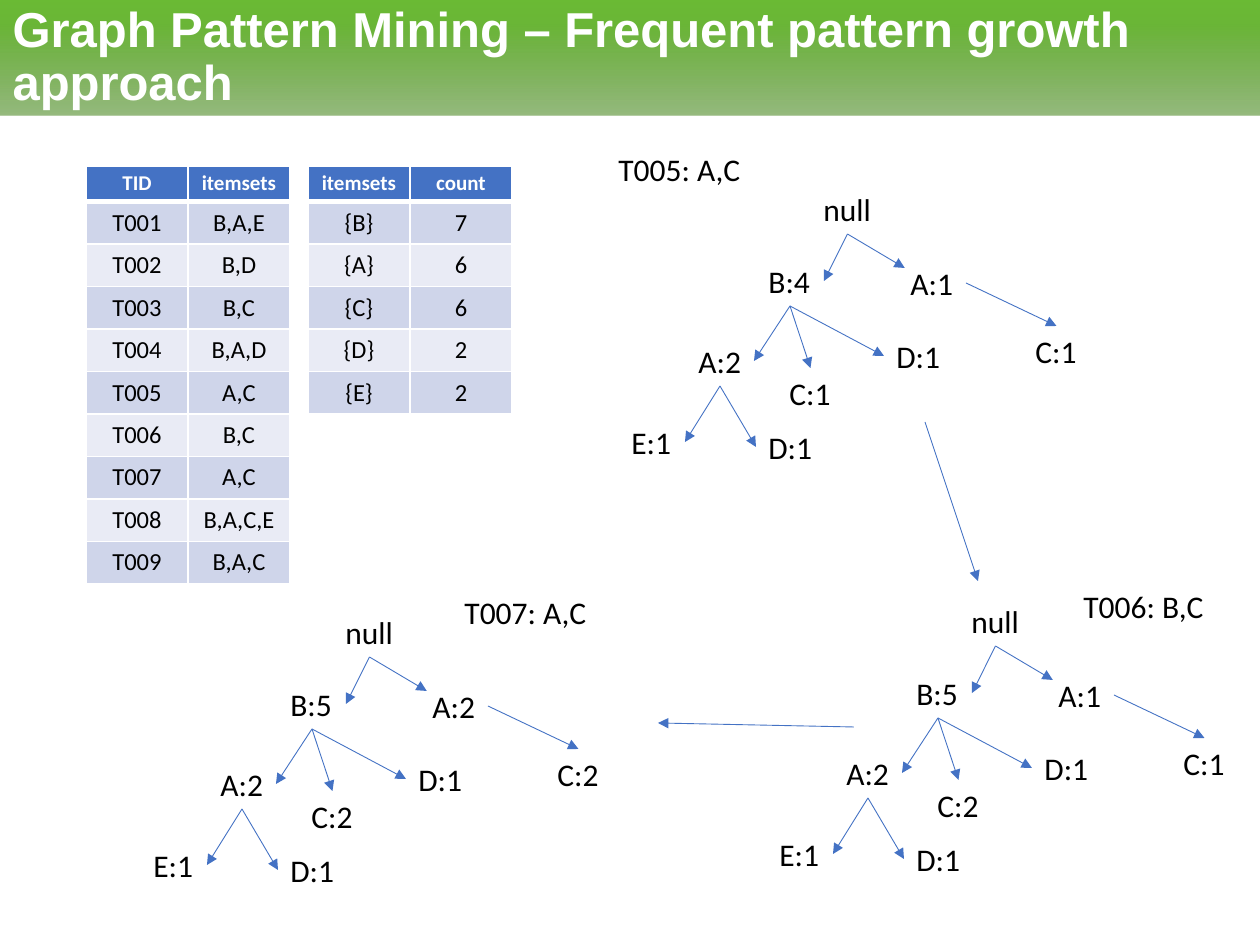
from dataclasses import dataclass

from pptx import Presentation
from pptx import oxml
from pptx import util as u
from pptx.dml.color import RGBColor
from pptx.enum import shapes, text
from pptx.oxml import ns

EMU_PER_PX = 914400 / 126


def px(length):
    """Turn px into EMU."""
    return u.Emu(round(length * EMU_PER_PX))


@dataclass(frozen=True)
class Theme:
    """Colours, fonts and type sizes of the slide."""
    ink: str = "000000"
    paper: str = "FFFFFF"
    accent: str = "4472C4"
    bands: tuple = ("CFD5EA", "E9EBF5")
    banner: tuple = ((0, "518D2A", 60), (80, "6AB636", 100), (100, "6ABA34", 100))
    title_font: str = "Arial"
    body_font: str = "Calibri"
    title_size: int = 28
    label_size: int = 18
    cell_size: int = 14
    header_size: int = 12
    line_width: float = 0.5


@dataclass(frozen=True)
class Branch:
    """A tree node: offset from the root, width, parent and the sides its arrow joins."""
    left: int
    top: int
    width: int
    parent: str = ""
    leaves: str = "bottom"
    enters: str = "left"


SIDES = {"top": (0.5, 0), "bottom": (0.5, 1), "left": (0, 0.5), "right": (1, 0.5), "corner": (0.1, 0.2)}
LABEL_HEIGHT = 50
TREE = {
    "root": Branch(0, 0, 73),
    "B": Branch(-55, 72, 68, "root", enters="right"),
    "BA": Branch(-125, 152, 68, "B", enters="right"),
    "BAE": Branch(-192, 233, 66, "BA", enters="right"),
    "BD": Branch(73, 147, 69, "B"),
    "BC": Branch(-34, 184, 67, "B", enters="top"),
    "BAD": Branch(-55, 238, 69, "BA"),
    "A": Branch(87, 74, 68, "root", enters="corner"),
    "AC": Branch(212, 142, 67, "A", leaves="right", enters="top"),
}


class Deck:
    """Draws the elements of the current slide in one theme."""

    def __init__(self, width, height, theme):
        self.theme = theme
        self.file = Presentation()
        self.file.slide_width, self.file.slide_height = px(width), px(height)
        self.slide = self.file.slides.add_slide(self.file.slide_layouts[5])

    def style(self, paragraph, size, color, font=None, bold=False):
        """Set the font of a whole paragraph."""
        paragraph.font.size = u.Pt(size)
        paragraph.font.name = font or self.theme.body_font
        paragraph.font.bold = bold
        paragraph.font.color.rgb = RGBColor.from_string(color)

    def title(self, wording, left, top, width, height):
        """Fill the title placeholder on a gradient banner."""
        banner = self.slide.shapes.title
        banner.left, banner.top, banner.width, banner.height = map(px, (left, top, width, height))
        stops = "".join(
            f'<a:gs pos="{at * 1000}"><a:srgbClr val="{color}"><a:alpha val="{alpha * 1000}"/></a:srgbClr></a:gs>'
            for at, color, alpha in self.theme.banner)
        banner._element.spPr.append(oxml.parse_xml(
            f'<a:gradFill {ns.nsdecls("a")}><a:gsLst>{stops}</a:gsLst><a:lin ang="16200000" scaled="0"/></a:gradFill>'))
        frame = banner.text_frame
        frame.text = wording
        frame.auto_size = text.MSO_AUTO_SIZE.NONE
        frame.vertical_anchor = text.MSO_ANCHOR.MIDDLE
        heading = frame.paragraphs[0]
        heading.alignment = text.PP_ALIGN.LEFT
        heading.line_spacing = 0.9
        self.style(heading, self.theme.title_size, self.theme.paper, self.theme.title_font, True)

    def table(self, rows, left, top, column=102, header=35, row=42):
        """Add a banded table whose first row is the header."""
        columns = len(rows[0])
        grid = self.slide.shapes.add_table(
            len(rows), columns, px(left), px(top), px(column * columns), px(header + row * (len(rows) - 1))).table
        for y, entries in enumerate(rows):
            grid.rows[y].height = px(row if y else header)
            for x, entry in enumerate(entries):
                self.cell(grid.cell(y, x), entry, y)

    def cell(self, cell, entry, row):
        """Write one table cell with its borders and fill."""
        theme = self.theme
        for side in "LRTB":
            points = 3 if row == 0 and side == "B" else 1
            cell._tc.get_or_add_tcPr().append(oxml.parse_xml(
                f'<a:ln{side} {ns.nsdecls("a")} w="{points * 12700}"><a:solidFill>'
                f'<a:srgbClr val="{theme.paper}"/></a:solidFill></a:ln{side}>'))
        cell.fill.solid()
        cell.fill.fore_color.rgb = RGBColor.from_string(theme.bands[(row - 1) % 2] if row else theme.accent)
        cell.vertical_anchor = text.MSO_ANCHOR.MIDDLE
        cell.text = entry
        words = cell.text_frame.paragraphs[0]
        words.alignment = text.PP_ALIGN.CENTER
        if row:
            self.style(words, theme.cell_size, theme.ink)
        else:
            cell.margin_top = cell.margin_bottom = px(5)
            self.style(words, theme.header_size, theme.paper, bold=True)

    def label(self, wording, left, top, width, group=None):
        """Add a one-line text box."""
        box = (group or self.slide).shapes.add_textbox(px(left), px(top), px(width), px(LABEL_HEIGHT))
        frame = box.text_frame
        frame.word_wrap = False
        frame.auto_size = text.MSO_AUTO_SIZE.SHAPE_TO_FIT_TEXT
        frame.text = wording
        self.style(frame.paragraphs[0], self.theme.label_size, self.theme.ink)

    def arrow(self, start, end, group=None):
        """Add a thin straight arrow."""
        line = (group or self.slide).shapes.add_connector(
            shapes.MSO_CONNECTOR.STRAIGHT, *map(px, (*start, *end)))
        line.line.width = u.Pt(self.theme.line_width)
        line.line.color.rgb = RGBColor.from_string(self.theme.accent)
        line.line._get_or_add_ln().append(oxml.parse_xml(f'<a:tailEnd {ns.nsdecls("a")} type="triangle"/>'))
        line._element.spPr.append(oxml.parse_xml(f'<a:effectLst {ns.nsdecls("a")}/>'))

    def tree(self, left, top, counts):
        """Add a grouped pattern tree with its root label at left, top."""
        group = self.slide.shapes.add_group_shape()

        def point(node, side):
            across, down = SIDES[side]
            return left + node.left + across * node.width, top + node.top + down * LABEL_HEIGHT

        for prefix, node in TREE.items():
            wording = f"{prefix[-1]}:{counts[prefix]}" if node.parent else "null"
            self.label(wording, left + node.left, top + node.top, node.width, group)
            if node.parent:
                self.arrow(point(TREE[node.parent], node.leaves), point(node, node.enters), group)


def main():
    """Build the slide."""
    deck = Deck(1260, 945, Theme())
    deck.title("Graph Pattern Mining – Frequent pattern growth approach", 0, 0, 1260, 116)

    supports = {"B": 7, "A": 6, "C": 6, "D": 2, "E": 2}
    deck.table([("itemsets", "count")] + [(f"{{{item}}}", str(n)) for item, n in supports.items()], 308, 166)
    transactions = ["B,A,E", "B,D", "B,C", "B,A,D", "A,C", "B,C", "A,C", "B,A,C,E", "B,A,C"]
    deck.table([("TID", "itemsets")] + [(f"T{n:03}", items) for n, items in enumerate(transactions, 1)], 86, 166)

    deck.label("T005: A,C", 606, 144, 148)
    deck.label("T006: B,C", 1071, 581, 148)
    deck.label("T007: A,C", 452, 587, 148)

    counts = {"B": 4, "BA": 2, "BAE": 1, "BD": 1, "BC": 1, "BAD": 1, "A": 1, "AC": 1}
    deck.tree(811, 184, counts)
    counts.update(B=5, BC=2)
    deck.tree(959, 596, counts)
    counts.update(A=2, AC=2)
    deck.tree(333, 607, counts)

    deck.arrow((925, 422), (978, 581))
    deck.arrow((854, 727), (658, 723))
    deck.file.save("out.pptx")


if __name__ == "__main__":
    main()
